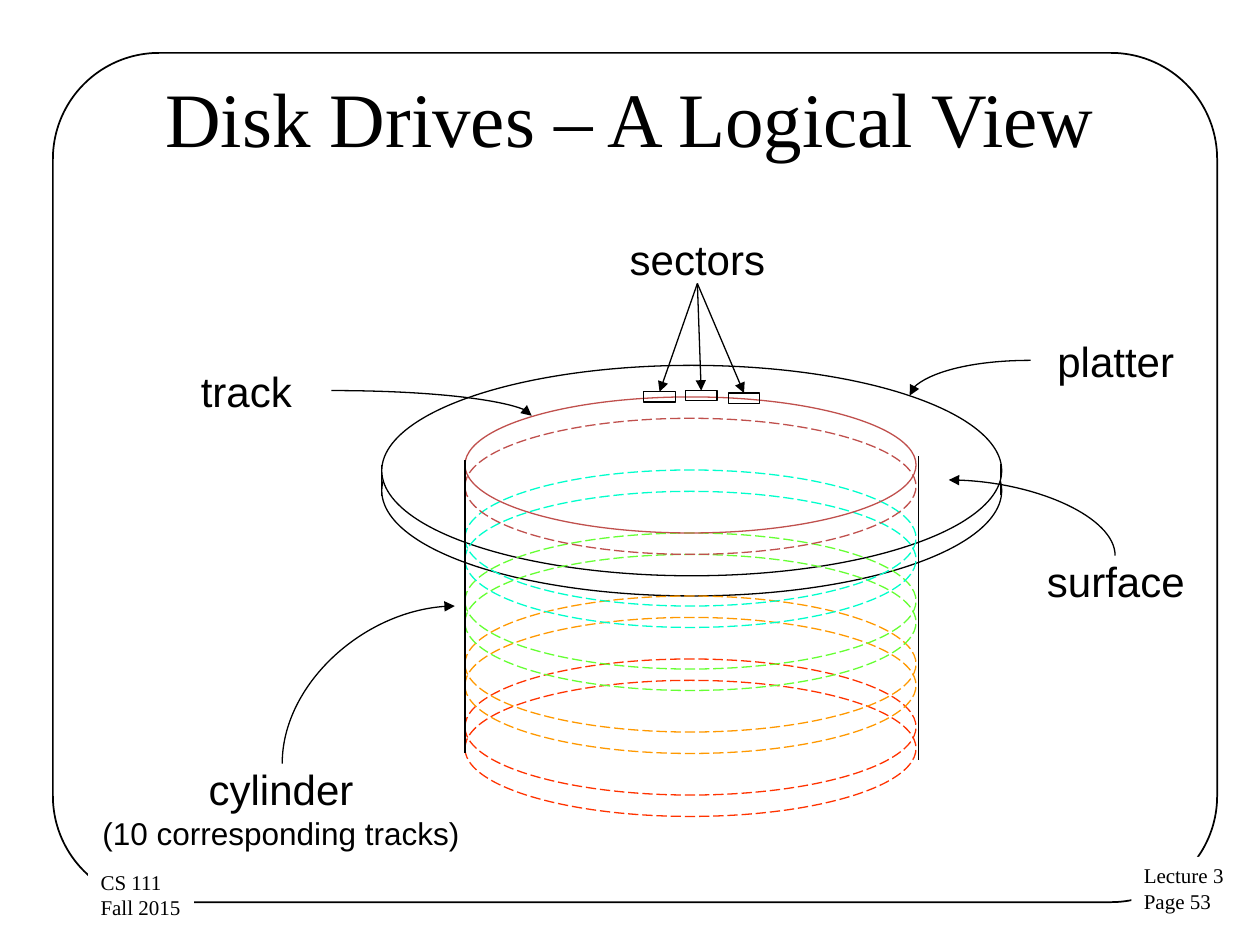
from lxml.etree import SubElement
from pptx import Presentation
from pptx.dml.color import RGBColor
from pptx.enum.dml import MSO_LINE
from pptx.enum.shapes import MSO_CONNECTOR, MSO_SHAPE
from pptx.enum.text import MSO_ANCHOR, MSO_AUTO_SIZE, PP_ALIGN
from pptx.oxml.ns import qn
from pptx.util import Inches, Pt


def color(hex_string):
    return RGBColor.from_string(hex_string)


class DiskSlide:
    ink = "000000"
    paper = "FFFFFF"
    serif = "Times New Roman"
    sans = "Arial"
    thin = 0.75

    def __init__(self, presentation):
        self.slide = presentation.slides.add_slide(presentation.slide_layouts[6])

    def outline(self, kind, left, top, width, height, line=ink, fill=None, weight=thin, dashed=False):
        shape = self.slide.shapes.add_shape(
            kind, Inches(left), Inches(top), Inches(width), Inches(height))
        shape.shadow.inherit = False
        if fill:
            shape.fill.solid()
            shape.fill.fore_color.rgb = color(fill)
        else:
            shape.fill.background()
        if line:
            shape.line.color.rgb = color(line)
            shape.line.width = Pt(weight)
        else:
            shape.line.fill.background()
        if dashed:
            shape.line.dash_style = MSO_LINE.LONG_DASH
        return shape

    def set_text(self, frame, lines, font, align):
        frame.text = "\n".join(text for text, size in lines)
        for paragraph, (text, size) in zip(frame.paragraphs, lines):
            paragraph.alignment = align
            for run in paragraph.runs:
                run.font.size = Pt(size)
                run.font.name = font
                run.font.color.rgb = color(self.ink)

    def title(self, text):
        box = self.slide.shapes.add_textbox(Inches(0.5), Inches(0.3), Inches(9), Inches(1.25))
        box.text_frame.word_wrap = True
        box.text_frame.vertical_anchor = MSO_ANCHOR.MIDDLE
        self.set_text(box.text_frame, [(text, 44)], self.serif, PP_ALIGN.CENTER)

    def footer(self, left, top, *lines):
        box = self.outline(MSO_SHAPE.RECTANGLE, left, top, 0.84, 0.51, line=None, fill=self.paper)
        frame = box.text_frame
        frame.word_wrap = False
        frame.vertical_anchor = MSO_ANCHOR.TOP
        frame.auto_size = MSO_AUTO_SIZE.SHAPE_TO_FIT_TEXT
        self.set_text(frame, [(text, 12) for text in lines], self.serif, PP_ALIGN.LEFT)

    def label(self, left, top, *lines, width=1.35, height=0.4):
        box = self.slide.shapes.add_textbox(
            Inches(left), Inches(top), Inches(width), Inches(height))
        frame = box.text_frame
        frame.margin_left = frame.margin_right = frame.margin_top = frame.margin_bottom = 0
        frame.word_wrap = True
        frame.auto_size = MSO_AUTO_SIZE.SHAPE_TO_FIT_TEXT
        self.set_text(frame, lines, self.sans, PP_ALIGN.CENTER)
        return box

    def connector(self, start, end, kind=MSO_CONNECTOR.STRAIGHT, arrow=False):
        link = self.slide.shapes.add_connector(kind, *map(Inches, (*start, *end)))
        link.line.color.rgb = color(self.ink)
        link.line.width = Pt(self.thin)
        properties = link.element.spPr
        if arrow:
            SubElement(properties.find(qn("a:ln")), qn("a:tailEnd"), type="triangle")
        SubElement(properties, qn("a:effectLst"))
        return link

    def curve(self, start, end, rising=False):
        if rising:
            (x1, y1), (x2, y2) = start, end
            middle_x, middle_y = (x1 + x2) / 2, (y1 + y2) / 2
            half_width, half_height = (y1 - y2) / 2, (x2 - x1) / 2
            start = middle_x - half_width, middle_y - half_height
            end = middle_x + half_width, middle_y + half_height
        link = self.connector(start, end, MSO_CONNECTOR.CURVE, arrow=True)
        properties = link.element.spPr
        properties.find(qn("a:prstGeom")).set("prst", "curvedConnector2")
        if rising:
            properties.find(qn("a:xfrm")).set("rot", str(270 * 60000))


def main():
    presentation = Presentation()
    presentation.slide_width = Inches(10)
    presentation.slide_height = Inches(7.5)
    view = DiskSlide(presentation)

    border = view.outline(MSO_SHAPE.ROUNDED_RECTANGLE, 0.42, 0.42, 9.24, 6.74, weight=1)
    border.adjustments[0] = 0.125
    view.footer(8.98, 6.8, "Lecture 3", "Page 53")
    view.footer(0.7, 6.85, "CS 111", "Fall 2015")
    view.title("Disk Drives – A Logical View")

    for top, fill in ((3.06, None), (2.9, view.paper)):
        view.outline(MSO_SHAPE.OVAL, 3.03, top, 4.92, 1.67, fill=fill)

    view.label(0.69, 6.06, ("cylinder", 24), ("(10 corresponding tracks)", 18),
               width=3.08, height=1.03)
    view.label(8.18, 2.66, ("platter", 24))

    platter_tracks = (("FF3300", 5.23), ("FF9900", 4.73), ("66FF33", 4.23),
                      ("00FFCC", 3.73), ("C0504D", 3.15))
    for hue, top in platter_tracks:
        for drop in (0.17, 0):
            hidden = drop > 0 or top > 3.15
            view.outline(MSO_SHAPE.OVAL, 3.69, top + drop, 3.58, 1.08, line=hue, dashed=hidden)

    view.connector((7.29, 3.62), (7.29, 6.03))
    view.connector((3.69, 3.65), (3.69, 5.98))
    view.curve((2.24, 6.06), (3.61, 4.81), rising=True)
    view.label(8.18, 4.41, ("surface", 24))
    view.label(1.28, 2.9, ("track", 24))
    view.curve((2.63, 3.1), (4.22, 3.3))
    view.curve((8.85, 4.41), (7.53, 3.81), rising=True)
    view.curve((8.18, 2.86), (7.22, 3.14))

    sectors = [view.outline(MSO_SHAPE.RECTANGLE, left, top, 0.25, 0.08)
               for left, top in ((5.11, 3.11), (5.44, 3.1), (5.78, 3.12))]
    sectors_label = view.label(4.86, 1.85, ("sectors", 24))
    for sector in sectors:
        pointer = view.connector((5.54, 2.25), (5.54, 3.1), arrow=True)
        pointer.begin_connect(sectors_label, 2)
        pointer.end_connect(sector, 0)

    view.connector((3.03, 3.94), (3.03, 3.69))
    view.connector((7.94, 3.93), (7.94, 3.68))
    presentation.save("out.pptx")


if __name__ == "__main__":
    main()
